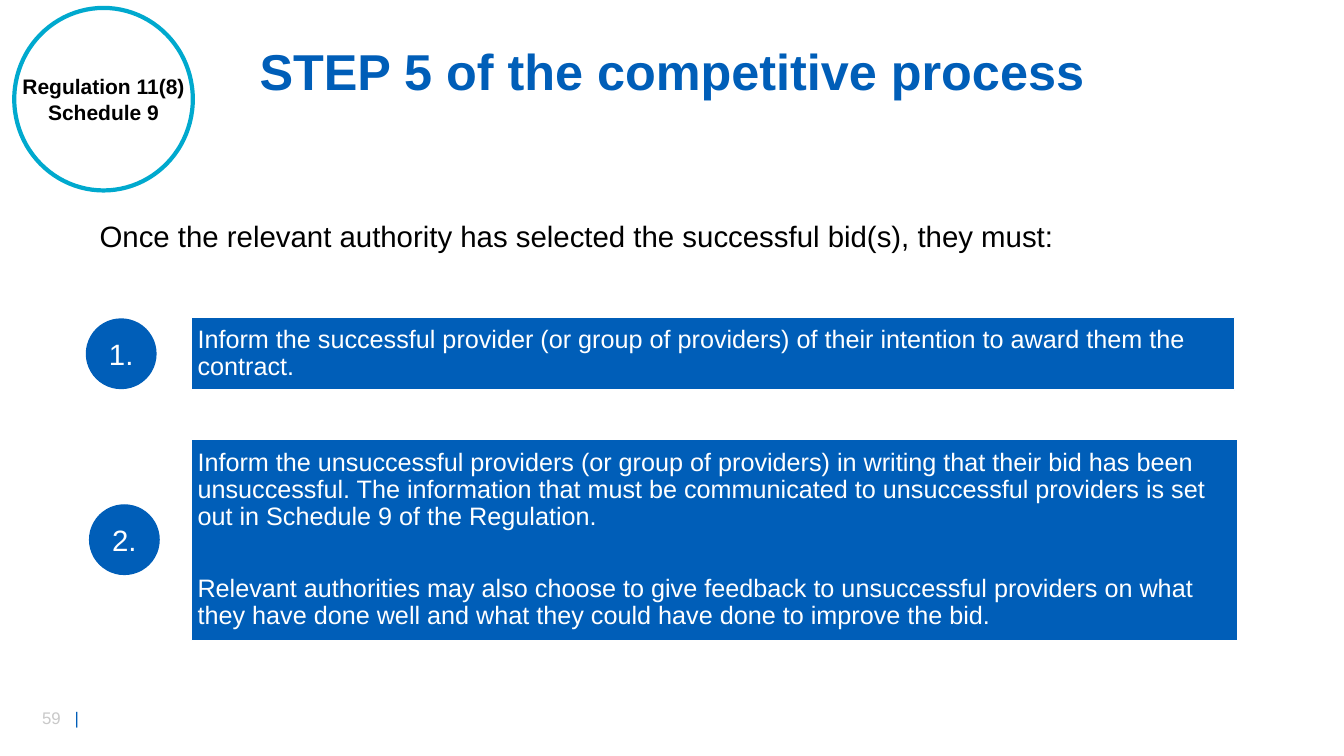
from lxml.etree import SubElement
from pptx import Presentation
from pptx.dml.color import RGBColor
from pptx.enum.shapes import MSO_SHAPE as Kind
from pptx.enum.text import MSO_ANCHOR as Anchor, PP_ALIGN as Align
from pptx.oxml.ns import qn
from pptx.util import Cm, Pt

BLUE = RGBColor(0x00, 0x5E, 0xB8)
AQUA = RGBColor(0x00, 0xA9, 0xCE)
GREY = RGBColor(0xC9, 0xC9, 0xC9)
BLACK = RGBColor(0, 0, 0)
WHITE = RGBColor(0xFF, 0xFF, 0xFF)


class Deck:
    font = "Arial"

    def __init__(self):
        self.show = Presentation()
        self.show.slide_width = Cm(33.87)
        self.show.slide_height = Cm(19.05)
        self.slide = self.show.slides.add_slide(self.show.slide_layouts[6])

    def style(self, item, size, color, bold=False):
        item.font.name = self.font
        item.font.size = Pt(size)
        item.font.color.rgb = color
        item.font.bold = bold

    def fill(self, frame, lines, size, color, bold=False,
             align=Align.LEFT, lead=1.0, gap=0):
        for i, line in enumerate(lines):
            par = frame.paragraphs[0] if i == 0 else frame.add_paragraph()
            par.text = line
            par.alignment = align
            par.line_spacing = lead
            par.space_before = Pt(gap if i else 0)
            self.style(par, size, color, bold)

    def inset(self, frame, pad):
        frame.margin_left = frame.margin_right = Cm(pad)
        frame.margin_top = frame.margin_bottom = Cm(pad)

    def text(self, box, line, size, color, **look):
        frame = self.slide.shapes.add_textbox(*map(Cm, box)).text_frame
        frame.word_wrap = True
        self.fill(frame, [line], size, color, **look)
        return frame

    def shape(self, kind, box, fill, edge, width, pad=0, wrap=True):
        shape = self.slide.shapes.add_shape(kind, *map(Cm, box))
        shape.shadow.inherit = False
        shape.fill.solid()
        shape.fill.fore_color.rgb = fill
        shape.line.color.rgb = edge
        shape.line.width = Pt(width)
        frame = shape.text_frame
        frame.word_wrap = wrap
        frame.vertical_anchor = Anchor.MIDDLE
        self.inset(frame, pad)
        return frame

    def badge(self, box, lines):
        frame = self.shape(Kind.OVAL, box, WHITE, AQUA, 3, wrap=False)
        self.fill(frame, lines, 15, BLACK, bold=True, align=Align.CENTER)

    def step(self, num, left, top, width, height, lines):
        size = 1.75
        frame = self.shape(Kind.RECTANGLE, (4.83, top, width, height),
                           BLUE, WHITE, 1, pad=0.15)
        self.fill(frame, lines, 18, WHITE, lead=0.9, gap=32)
        mid = top + (height - size) / 2
        frame = self.shape(Kind.OVAL, (left, mid, size, size), BLUE, BLUE, 1)
        self.fill(frame, [f"{num}."], 21, WHITE, align=Align.CENTER)

    def footer(self, box, num):
        frame = self.slide.shapes.add_textbox(*map(Cm, box)).text_frame
        par = frame.paragraphs[0]
        tabs = SubElement(par._p.get_or_add_pPr(), qn("a:tabLst"))
        SubElement(tabs, qn("a:tab"), pos=str(Cm(0.82)), algn="l")
        for words, color in ((num, GREY), ("\t|", BLUE)):
            run = par.add_run()
            run.text = words
            self.style(run, 12, color)


def main():
    deck = Deck()
    deck.footer((0.81, 17.7, 1.8, 0.76), "59")
    title = deck.text((6.02, 1.02, 21.84, 1.7),
                      "STEP 5 of the competitive process", 36, BLUE,
                      bold=True, align=Align.CENTER, lead=0.9)
    title.vertical_anchor = Anchor.MIDDLE
    deck.text((2.26, 5.38, 29.36, 1.14),
              "Once the relevant authority has selected the successful bid(s), "
              "they must:", 21, BLACK)
    deck.badge((0.36, 0.2, 4.5, 4.6), ["Regulation 11(8)", "Schedule 9"])
    deck.step(1, 2.18, 8, 26.29, 1.83, [
        "Inform the successful provider (or group of providers) of their "
        "intention to award them the contract."])
    deck.step(2, 2.26, 11.06, 26.37, 5.08, [
        "Inform the unsuccessful providers (or group of providers) in writing "
        "that their bid has been unsuccessful. The information that must be "
        "communicated to unsuccessful providers is set out in Schedule 9 of "
        "the Regulation.",
        "Relevant authorities may also choose to give feedback to "
        "unsuccessful providers on what they have done well and what they "
        "could have done to improve the bid."])
    deck.show.save("out.pptx")


if __name__ == "__main__":
    main()
